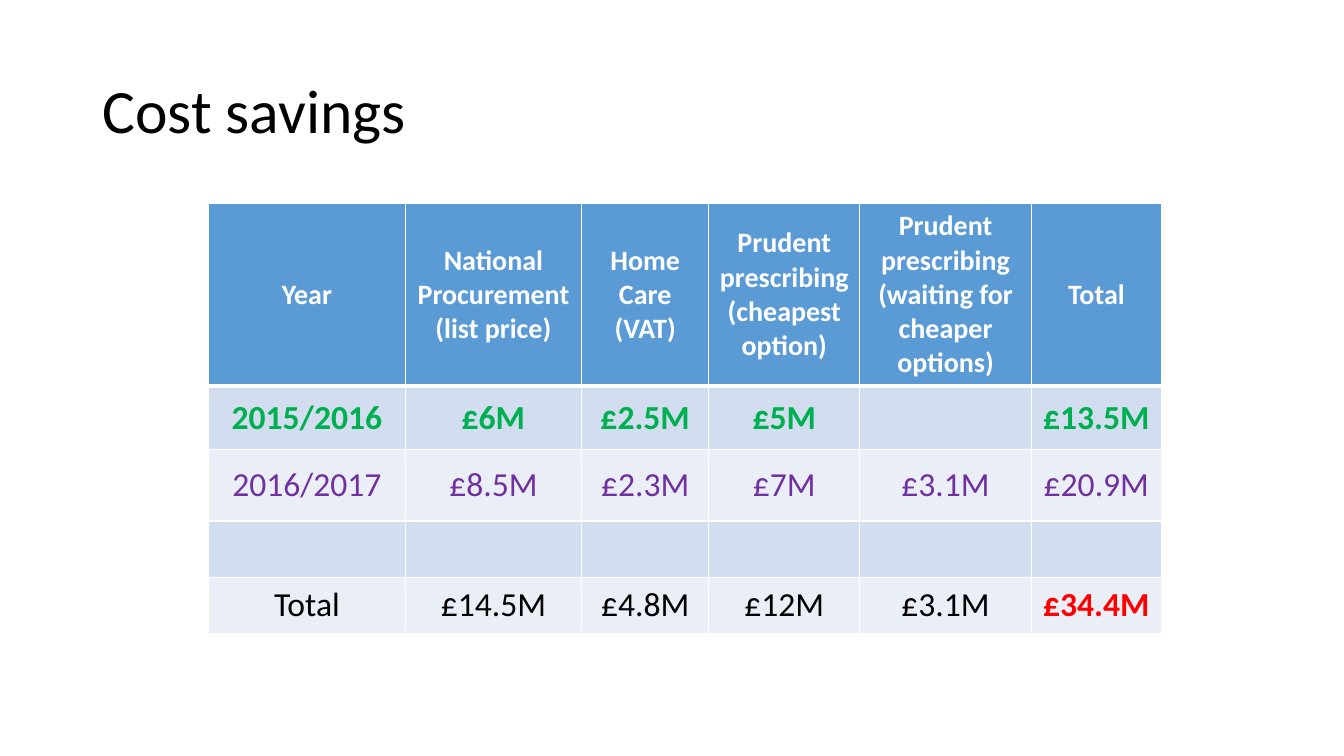
from dataclasses import dataclass

from lxml.etree import fromstring
from pptx import Presentation
from pptx.dml.color import RGBColor
from pptx.enum.text import MSO_ANCHOR, PP_ALIGN
from pptx.util import Cm, Pt

TITLE = "Cost savings"
ROWS = [
    ["Year", "National Procurement (list price)", "Home Care (VAT)",
     "Prudent prescribing (cheapest option)",
     "Prudent prescribing (waiting for cheaper options)", "Total"],
    ["2015/2016", "£6M", "£2.5M", "£5M", "", "£13.5M"],
    ["2016/2017", "£8.5M", "£2.3M", "£7M", "£3.1M", "£20.9M"],
    [""] * 6,
    ["Total", "£14.5M", "£4.8M", "£12M", "£3.1M", "£34.4M"],
]
COLUMN_WIDTHS = [4.95, 4.45, 3.2, 3.81, 4.32, 3.28]
ROW_HEIGHTS = [4.6, 1.6, 1.8, 1.42, 1.42]
TABLE_LEFT, TABLE_TOP = 5.26, 5.13


@dataclass(frozen=True)
class Theme:
    font: str = "Calibri"
    title_size: int = 44
    header_size: int = 20
    body_size: int = 24
    black: str = "000000"
    white: str = "FFFFFF"
    green: str = "00B050"
    purple: str = "7030A0"
    red: str = "FF0000"
    header_fill: str = "5B9BD5"
    band_fills: tuple = ("D2DEEF", "EAEFF7")
    thin_border: int = 1
    thick_border: int = 3


THEME = Theme()
ROW_FORMATS = [
    dict(size=THEME.header_size, color=THEME.white, bold=True),
    dict(color=THEME.green, bold=True),
    dict(color=THEME.purple),
    dict(),
    dict(),
]
GRAND_TOTAL_FORMAT = dict(color=THEME.red, bold=True)


def write_text(frame, text, size=THEME.body_size, color=THEME.black, bold=False,
               align=PP_ALIGN.CENTER, line_spacing=1.0):
    frame.word_wrap = True
    paragraph = frame.paragraphs[0]
    paragraph.alignment = align
    paragraph.line_spacing = line_spacing
    if text:
        run = paragraph.add_run()
        run.text = text
        run.font.name = THEME.font
        run.font.size = Pt(size)
        run.font.bold = bold
        run.font.color.rgb = RGBColor.from_string(color)


def set_borders(cell, **widths):
    properties = cell._tc.get_or_add_tcPr()
    for position, side in enumerate("LRTB"):
        width = Pt(widths.get(side, THEME.thin_border))
        properties.insert(position, fromstring(
            f'<a:ln{side} xmlns:a="http://schemas.openxmlformats.org/drawingml/2006/main" '
            f'w="{width}"><a:solidFill><a:srgbClr val="{THEME.white}"/></a:solidFill></a:ln{side}>'))


def add_title(slide):
    title = slide.shapes.title
    title.left, title.top, title.width, title.height = Cm(2.33), Cm(1.01), Cm(29.21), Cm(3.68)
    title.text_frame.vertical_anchor = MSO_ANCHOR.MIDDLE
    write_text(title.text_frame, TITLE, size=THEME.title_size,
               align=PP_ALIGN.LEFT, line_spacing=0.9)


def add_savings_table(slide):
    table = slide.shapes.add_table(
        len(ROWS), len(COLUMN_WIDTHS), Cm(TABLE_LEFT), Cm(TABLE_TOP),
        Cm(sum(COLUMN_WIDTHS)), Cm(sum(ROW_HEIGHTS))).table
    for column, width in zip(table.columns, COLUMN_WIDTHS):
        column.width = Cm(width)
    for row, height in zip(table.rows, ROW_HEIGHTS):
        row.height = Cm(height)

    header_edges = {0: {"B": THEME.thick_border}, 1: {"T": THEME.thick_border}}
    grand_total = (len(ROWS) - 1, len(COLUMN_WIDTHS) - 1)
    for row_index, values in enumerate(ROWS):
        fill = THEME.band_fills[(row_index - 1) % 2] if row_index else THEME.header_fill
        for column_index, text in enumerate(values):
            cell = table.cell(row_index, column_index)
            cell.vertical_anchor = MSO_ANCHOR.MIDDLE
            cell.fill.solid()
            cell.fill.fore_color.rgb = RGBColor.from_string(fill)
            set_borders(cell, **header_edges.get(row_index, {}))
            is_grand_total = (row_index, column_index) == grand_total
            text_format = GRAND_TOTAL_FORMAT if is_grand_total else ROW_FORMATS[row_index]
            write_text(cell.text_frame, text, **text_format)


def main():
    """Build the cost savings slide."""
    presentation = Presentation()
    presentation.slide_width, presentation.slide_height = Cm(33.87), Cm(19.05)
    slide = presentation.slides.add_slide(presentation.slide_layouts.get_by_name("Title Only"))
    add_title(slide)
    add_savings_table(slide)
    presentation.save("out.pptx")


if __name__ == "__main__":
    main()
